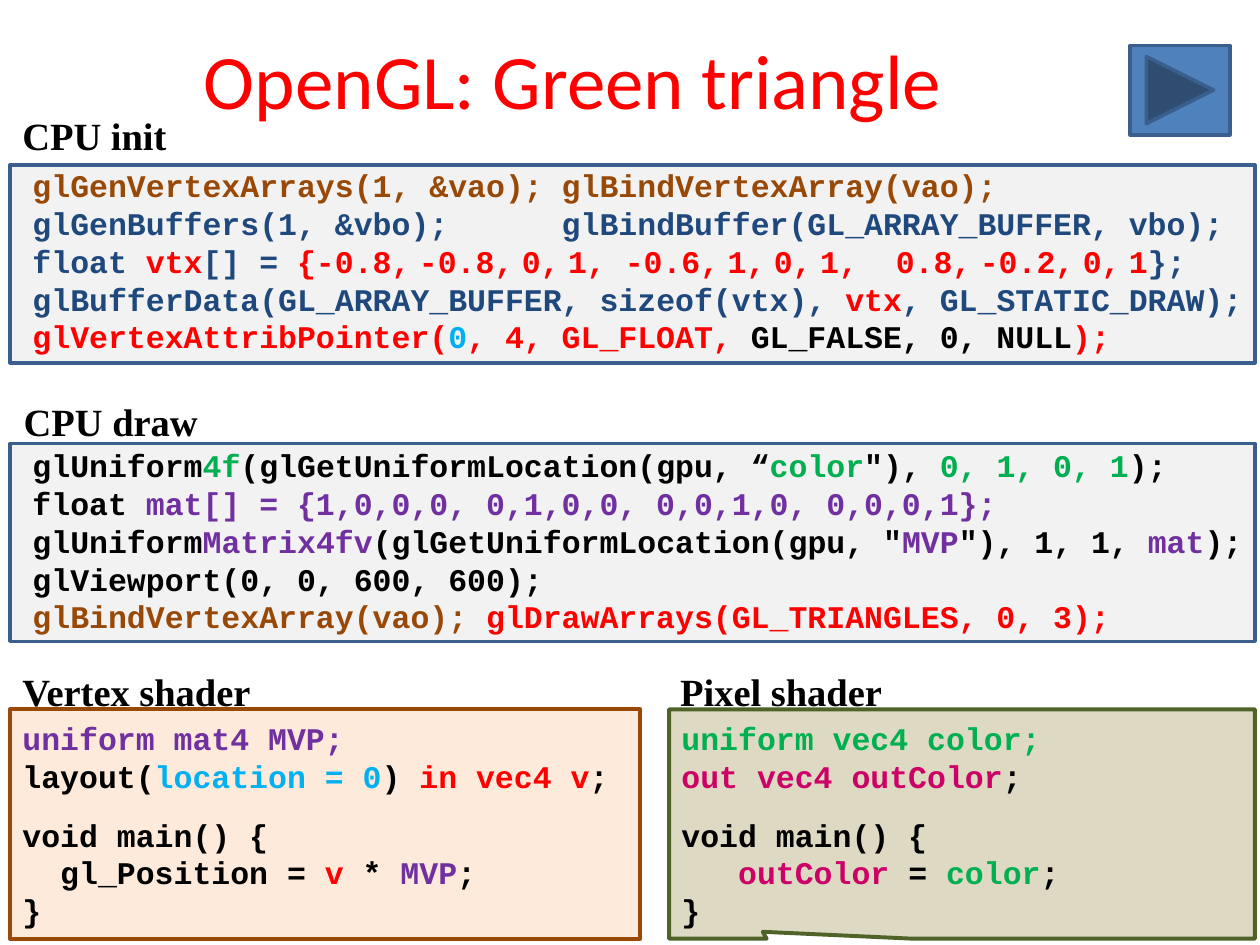
from pptx import Presentation
from pptx import util as u
from pptx.dml.color import RGBColor
from pptx.enum import shapes, text

# Colours
BLACK, RED, GREEN, BLUE = "000000", "FF0000", "00B050", "1F497D"
PURPLE, BROWN, CYAN, PINK = "7030A0", "984807", "00B0F0", "CC0066"
PANEL, EDGE = "F2F2F2", "3A5F8C"

# Content: a line is a list of (colour, code); "~" stands for a narrow space
TITLE = "OpenGL: Green triangle"
CPU_INIT = [
    [(BROWN, "glGenVertexArrays(1, &vao); glBindVertexArray(vao);")],
    [(BLUE, "glGenBuffers(1, &vbo);      glBindBuffer(GL_ARRAY_BUFFER, vbo);")],
    [(BLUE, "float "), (RED, "vtx"), (BLUE, "[] = "),
     (RED, "{-0.8,~-0.8,~0,~1, -0.6,~1,~0,~1,  0.8,~-0.2,~0,~1"), (BLUE, "};")],
    [(BLUE, "glBufferData(GL_ARRAY_BUFFER, sizeof(vtx), "), (RED, "vtx"),
     (BLUE, ", GL_STATIC_DRAW);")],
    [(RED, "glVertexAttribPointer("), (CYAN, "0"), (RED, ", 4, GL_FLOAT, "),
     (BLACK, "GL_FALSE, 0, NULL"), (RED, ");")],
]
CPU_DRAW = [
    [(BLACK, "glUniform"), (GREEN, "4f"), (BLACK, "(glGetUniformLocation(gpu, “"),
     (GREEN, "color"), (BLACK, "\"), "), (GREEN, "0, 1, 0, 1"), (BLACK, ");")],
    [(BLACK, "float "), (PURPLE, "mat[] = {1,0,0,0, 0,1,0,0, 0,0,1,0, 0,0,0,1};")],
    [(BLACK, "glUniform"), (PURPLE, "Matrix4fv"),
     (BLACK, "(glGetUniformLocation(gpu, \""), (PURPLE, "MVP"),
     (BLACK, "\"), 1, 1, "), (PURPLE, "mat"), (BLACK, ");")],
    [(BLACK, "glViewport(0, 0, 600, 600);")],
    [(BROWN, "glBindVertexArray(vao); "), (RED, "glDrawArrays(GL_TRIANGLES, 0, 3);")],
]
VERTEX_SHADER = [
    [(PURPLE, "uniform mat4 MVP;")],
    [(BLACK, "layout("), (CYAN, "location = 0"), (BLACK, ") "),
     (RED, "in vec4 v"), (BLACK, ";")],
    [(BLACK, "void main() {")],
    [(BLACK, "  gl_Position = "), (RED, "v "), (BLACK, "* "),
     (PURPLE, "MVP"), (BLACK, ";")],
    [(BLACK, "}")],
]
PIXEL_SHADER = [
    [(GREEN, "uniform vec4 color;")],
    [(PINK, "out vec4 outColor"), (BLACK, ";")],
    [(BLACK, "void main() {")],
    [(PINK, "   outColor "), (BLACK, "= "), (GREEN, "color"), (BLACK, ";")],
    [(BLACK, "}")],
]
HEADINGS = [("CPU init", 0.08, 0.84, 1.36), ("CPU draw", 0.09, 3.11, 1.6),
            ("Vertex shader", 0.08, 5.25, 2.03), ("Pixel shader", 5.3, 5.25, 1.82)]

# Layout in inches
LEFT, RIGHT = 0.08, 9.96
PANEL_TOPS, PANEL_HEIGHT = (3.52, 1.31), 1.57
SHADER_TOP, SHADER_HEIGHT = 5.63, 1.82
PIXEL_LEFT = 5.31
CODE_SIZE, NARROW_SIZE, LINE_PITCH = 18, 8, 21.6

presentation = Presentation()
presentation.slide_width, presentation.slide_height = u.Inches(10), u.Inches(7.5)
slide = presentation.slides.add_slide(presentation.slide_layouts[6])


def color(value):
    return RGBColor.from_string(value)


def add_box(kind, area, fill, line, width):
    shape = slide.shapes.add_shape(kind, *map(u.Inches, area))
    shape.shadow.inherit = False
    shape.fill.solid()
    shape.fill.fore_color.rgb = color(fill)
    shape.line.color.rgb = color(line)
    shape.line.width = u.Pt(width)
    return shape


def add_label(label, area, size, name, value, wrap=False):
    frame = slide.shapes.add_textbox(*map(u.Inches, area)).text_frame
    frame.word_wrap = wrap
    paragraph = frame.paragraphs[0]
    paragraph.text = label
    font = paragraph.font
    font.size, font.name, font.color.rgb = u.Pt(size), name, color(value)
    return frame


def write_code(frame, lines, gap_line, gap):
    """Write coloured code, with extra space before the line gap_line."""
    frame.word_wrap = True
    for index, line in enumerate(lines):
        paragraph = frame.add_paragraph() if index else frame.paragraphs[0]
        paragraph.alignment = text.PP_ALIGN.LEFT
        paragraph.line_spacing = u.Pt(LINE_PITCH)
        paragraph.space_before = u.Pt(gap if index == gap_line else 0)
        font = paragraph.font
        font.name, font.size, font.bold = "Courier New", u.Pt(CODE_SIZE), True
        for value, code in line:
            for number, piece in enumerate(code.split("~")):
                if number:
                    space = paragraph.add_run()
                    space.text = " "
                    space.font.size = u.Pt(NARROW_SIZE)
                run = paragraph.add_run()
                run.text = piece
                run.font.color.rgb = color(value)


# CPU panels
for top in PANEL_TOPS:
    add_box(shapes.MSO_SHAPE.RECTANGLE, (LEFT, top, RIGHT - LEFT, PANEL_HEIGHT),
            PANEL, EDGE, 2)

# Title
title = add_label(TITLE, (0.16, 0, 8.78, 1.25), 44, "Calibri", RED, wrap=True)
title.vertical_anchor = text.MSO_ANCHOR.MIDDLE
title.paragraphs[0].alignment = text.PP_ALIGN.CENTER

# CPU code runs through both panels
cpu_code = slide.shapes.add_textbox(*map(u.Inches, (0.16, 1.27, 10.36, 3.82)))
write_code(cpu_code.text_frame, CPU_INIT + CPU_DRAW, len(CPU_INIT), 52)

# Shaders
vertex = add_box(shapes.MSO_SHAPE.RECTANGLE, (LEFT, SHADER_TOP, 5, SHADER_HEIGHT),
                 "FDEADA", BROWN, 2.25)
pixel = add_box(shapes.MSO_SHAPE.RECTANGULAR_CALLOUT,
                (PIXEL_LEFT, SHADER_TOP, RIGHT - PIXEL_LEFT, SHADER_HEIGHT),
                "DDD9C3", "4F6228", 2.25)
pixel.adjustments[0], pixel.adjustments[1] = -0.34, 0.47
for shape, lines in ((vertex, VERTEX_SHADER), (pixel, PIXEL_SHADER)):
    shape.text_frame.vertical_anchor = text.MSO_ANCHOR.MIDDLE
    write_code(shape.text_frame, lines, 2, 12)

# Headings
for label, left, top, width in HEADINGS:
    heading = add_label(label, (left, top, width, 0.47), 22, "Times New Roman", BLACK)
    heading.paragraphs[0].font.bold = True

# Forward button
add_box(shapes.MSO_SHAPE.ACTION_BUTTON_FORWARD_OR_NEXT, (8.97, 0.36, 0.79, 0.71),
        "4F81BD", EDGE, 2)

presentation.save("out.pptx")
